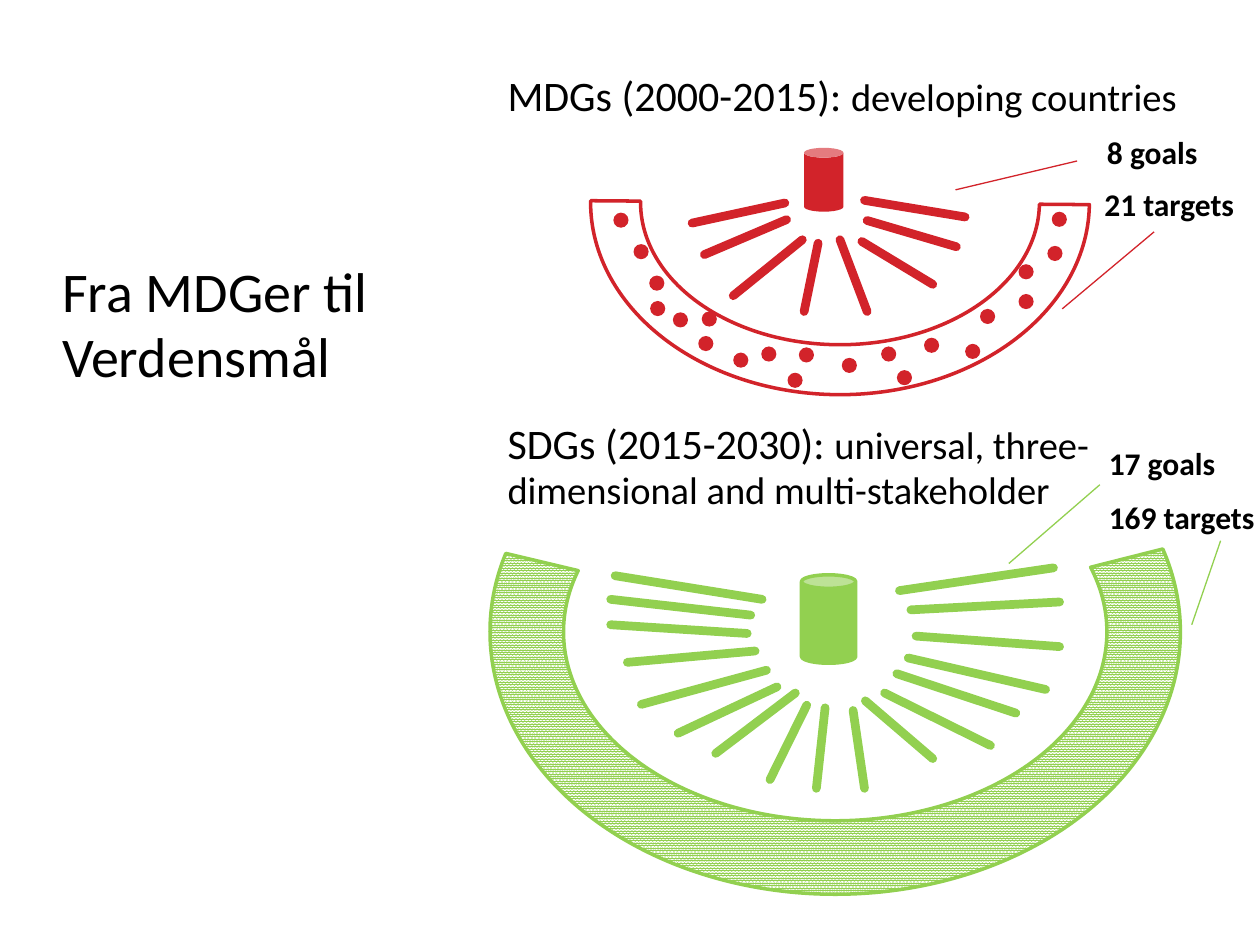
from pptx import Presentation
from pptx.dml.color import RGBColor
from pptx.enum.dml import MSO_PATTERN
from pptx.enum.shapes import MSO_CONNECTOR, MSO_SHAPE
from pptx.oxml.ns import qn
from pptx.util import Pt
from lxml import etree

COLORS = {"black": "000000", "white": "FFFFFF", "red": "D2232A", "green": "92D050"}
FONT = "Calibri"
DOT = 8.64

RED_SPOKES = [
    (448.5, 116, 395.5, 127.5), (449.5, 125.5, 402.5, 145.5),
    (458.5, 137, 419, 169), (480, 137, 495.5, 178),
    (492.5, 138, 533, 162.5), (551.5, 124, 494, 114.5),
    (467.5, 139, 459.5, 178), (546.5, 141, 495.5, 126),
]
GREEN_SPOKES = [
    (435.5, 342.5, 351.5, 329), (429, 351.5, 349, 342.5),
    (427, 362, 349, 357), (438, 383, 366.5, 402.5),
    (444, 392.5, 387.5, 419), (602, 324.5, 514, 337.5),
    (431.5, 372, 358.5, 378.5), (605.5, 344, 520.5, 348.5),
    (466.5, 450.5, 471.5, 404.5), (409, 430.5, 454.5, 396),
    (597.5, 394, 519, 376), (605.5, 369.5, 523.5, 363.5),
    (580.5, 407.5, 512.5, 385), (533, 433.5, 494.5, 400.5),
    (566, 426, 505.5, 396), (494, 450.5, 487.5, 406),
    (461, 403, 440, 445.5),
]
TARGET_DOTS = [
    (350.5, 121.5), (362, 139.5), (371.5, 172), (384.5, 178.5), (399, 192),
    (435, 198), (371, 157.5), (582, 151), (401, 178), (601, 121),
    (419, 201.5), (450, 213), (456.5, 198.5), (481, 204.5), (512.5, 211.5),
    (503.5, 198), (528, 193), (551.5, 196.5), (560, 176.5), (582, 168),
    (598.5, 140.5),
]
LEADERS = [
    ("red", (615.5, 92, 546, 108.5)), ("red", (659.5, 132.5, 607, 176.5)),
    ("green", (628.5, 277, 576.5, 322)), ("green", (697.5, 309, 681, 357)),
]
LABELS = [
    ("8 goals", 625.5, 72.5, 88), ("21 targets", 624, 102, 96.5),
    ("17 goals", 626.5, 250, 88), ("169 targets", 626.5, 281, 106),
]


class Canvas:
    def __init__(self, prs):
        self.s = prs.slides.add_slide(prs.slide_layouts[6])

    def color(self, name):
        return RGBColor.from_string(COLORS[name])

    def text(self, x, y, w, h, runs, bold=False, insets=(0, 7.2, 0, 0), spacing=None):
        tf = self.s.shapes.add_textbox(Pt(x), Pt(y), Pt(w), Pt(h)).text_frame
        tf.word_wrap = True
        tf.margin_left, tf.margin_top, tf.margin_right, tf.margin_bottom = map(Pt, insets)
        p = tf.paragraphs[0]
        if spacing:
            p.line_spacing = spacing
        for words, size in runs:
            r = p.add_run()
            r.text = words
            r.font.name = FONT
            r.font.size = Pt(size)
            r.font.bold = bold
            r.font.color.rgb = self.color("black")

    def shape(self, kind, x, y, w, h, fill, line=None, pattern=None):
        sp = self.s.shapes.add_shape(kind, Pt(x), Pt(y), Pt(w), Pt(h))
        sp.shadow.inherit = False
        if pattern:
            sp.fill.patterned()
            sp.fill.pattern = pattern
            sp.fill.fore_color.rgb = self.color(fill)
            sp.fill.back_color.rgb = self.color("white")
        else:
            sp.fill.solid()
            sp.fill.fore_color.rgb = self.color(fill)
        if line:
            sp.line.color.rgb = self.color(line)
            sp.line.width = Pt(2)
        else:
            sp.line.fill.background()
        return sp

    def arc(self, x, y, w, h, adjustments, fill, line, pattern=None):
        sp = self.shape(MSO_SHAPE.BLOCK_ARC, x, y, w, h, fill, line, pattern)
        sp.rotation = 180
        for i, value in enumerate(adjustments):
            sp.adjustments[i] = value

    def line(self, ends, color, width, cap="flat"):
        c = self.s.shapes.add_connector(MSO_CONNECTOR.STRAIGHT, *map(Pt, ends))
        c.line.color.rgb = self.color(color)
        c.line.width = Pt(width)
        c.get_or_add_ln().set("cap", cap)
        etree.SubElement(c._element.spPr, qn("a:effectLst"))

    def spokes(self, lines, color):
        for ends in lines:
            self.line(ends, color, 5, "rnd")


def main():
    prs = Presentation()
    prs.slide_width, prs.slide_height = Pt(720), Pt(540)
    canvas = Canvas(prs)

    canvas.text(35.5, 142, 227, 398, [("Fra MDGer til Verdensmål", 32)], spacing=0.96)
    canvas.text(290, 34.5, 398, 40,
                [("MDGs (2000-2015): ", 24), ("developing countries", 22)], spacing=0.96)
    canvas.text(290, 233, 398, 64,
                [("SDGs (2015-2030): ", 24),
                 ("universal, three- dimensional and multi-stakeholder", 22)], spacing=0.96)

    canvas.shape(MSO_SHAPE.CAN, 458, 328.5, 31, 50.5, "green", "green")
    canvas.spokes(GREEN_SPOKES, "green")
    canvas.arc(280, 211, 394.5, 300, (99.49, 8.03, 0.14), "green", "green",
               MSO_PATTERN.PERCENT_90)

    canvas.shape(MSO_SHAPE.CAN, 459.5, 84.5, 22.5, 36.5, "red")
    canvas.spokes(RED_SPOKES, "red")
    canvas.arc(337.5, 6, 285, 219.5, (108.28, 0.26, 0.13), "white", "red")
    for x, y in TARGET_DOTS:
        canvas.shape(MSO_SHAPE.FLOWCHART_CONNECTOR, x, y, DOT, DOT, "red")

    for words, x, y, w in LABELS:
        canvas.text(x, y, w, 29, [(words, 18)], bold=True, insets=(7.2, 3.6, 7.2, 3.6))
    for color, ends in LEADERS:
        canvas.line(ends, color, 0.75)

    prs.save("out.pptx")


if __name__ == "__main__":
    main()
